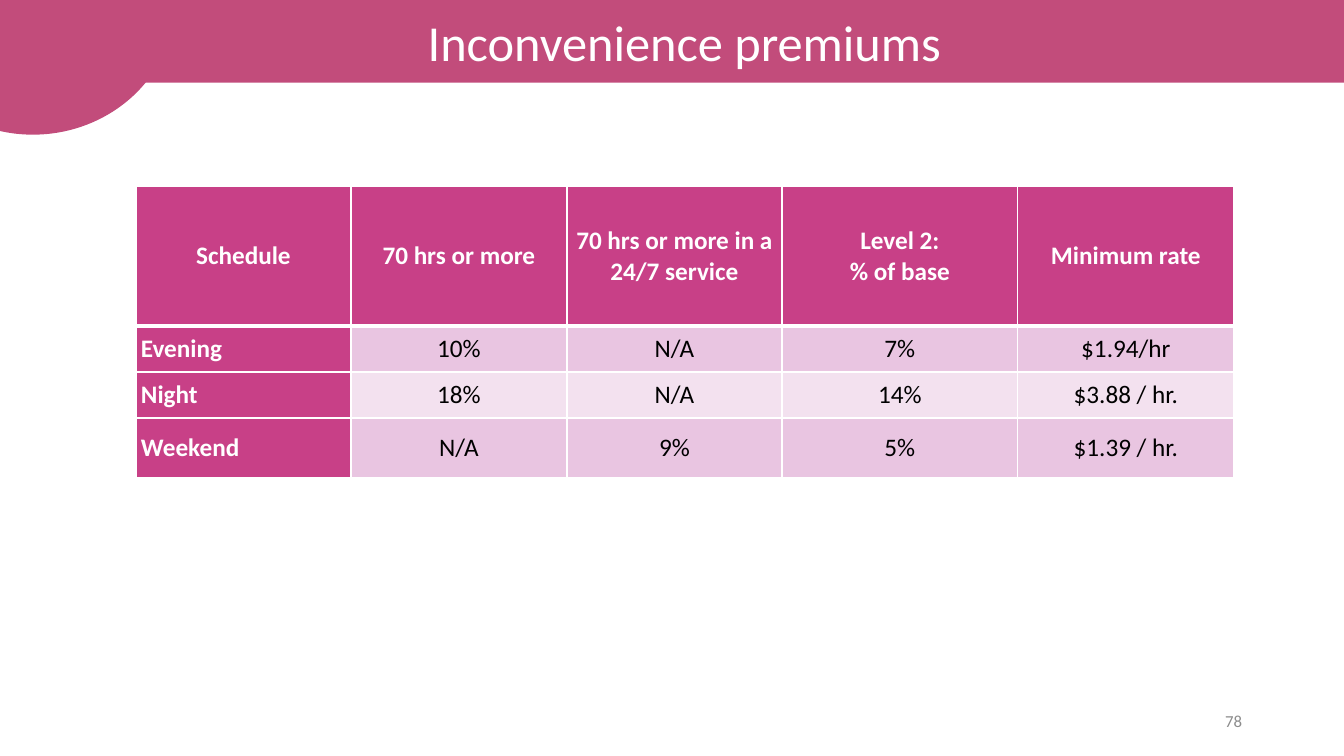
from pptx import Presentation
from pptx.dml.color import RGBColor
from pptx.enum.shapes import MSO_SHAPE
from pptx.enum.text import MSO_ANCHOR, PP_ALIGN
from pptx.oxml import parse_xml
from pptx.oxml.ns import nsdecls
from pptx.util import Pt

# Content
TITLE = "Inconvenience premiums"
PAGE_NUMBER = "78"
PREMIUMS = [
    ("Schedule", "70 hrs or more", "70 hrs or more in a 24/7 service",
     "Level 2:\v% of base", "Minimum rate"),
    ("Evening", "10%", "N/A", "7%", "$1.94/hr"),
    ("Night", "18%", "N/A", "14%", "$3.88 / hr."),
    ("Weekend", "N/A", "9%", "5%", "$1.39 / hr."),
]

# Look, lengths in px
FONT = "Calibri"
WHITE, BLACK, GREY = "FFFFFF", "000000", "8C8C8C"
BANNER_PINK, HEADING_PINK = "C24C7B", "C84087"
BANDS = ("F3E1EF", "E9C5E1")
COLUMN_WIDTHS = (215, 216, 215, 236, 216)
ROW_HEIGHTS = (140, 46, 46, 60)
TABLE_LEFT, TABLE_TOP = 136, 186


def px(length):
    return round(length * 914400 / 100.8)


def box(left, top, width, height):
    return px(left), px(top), px(width), px(height)


def rgb(value):
    return RGBColor.from_string(value)


def write(frame, text, size, color, align, bold=False):
    frame.text = text
    frame.word_wrap = True
    paragraph = frame.paragraphs[0]
    paragraph.alignment = align
    for run in paragraph.runs:
        run.font.name = FONT
        run.font.size = Pt(size)
        run.font.bold = bold
        run.font.color.rgb = rgb(color)


def add_pink_shape(slide, preset, place):
    shape = slide.shapes.add_shape(preset, *box(*place))
    shape.shadow.inherit = False
    shape.fill.solid()
    shape.fill.fore_color.rgb = rgb(BANNER_PINK)
    shape.line.color.rgb = rgb(BANNER_PINK)
    shape.line.width = Pt(1)
    return shape


def set_borders(cell, widths):
    properties = cell._tc.get_or_add_tcPr()
    for position, (side, width) in enumerate(widths.items()):
        properties.insert(position, parse_xml(
            f'<a:{side} {nsdecls("a")} w="{Pt(width)}"><a:solidFill>'
            f'<a:srgbClr val="{WHITE}"/></a:solidFill></a:{side}>'))


def add_premiums(slide):
    premiums = slide.shapes.add_table(
        len(ROW_HEIGHTS), len(COLUMN_WIDTHS),
        *box(TABLE_LEFT, TABLE_TOP, sum(COLUMN_WIDTHS), sum(ROW_HEIGHTS))).table
    for column, width in zip(premiums.columns, COLUMN_WIDTHS):
        column.width = px(width)
    for row, height in zip(premiums.rows, ROW_HEIGHTS):
        row.height = px(height)
    for r, values in enumerate(PREMIUMS):
        for c, value in enumerate(values):
            cell = premiums.cell(r, c)
            heading = r == 0 or c == 0
            cell.margin_left = cell.margin_right = px(5)
            cell.margin_top = cell.margin_bottom = 0
            cell.vertical_anchor = MSO_ANCHOR.MIDDLE
            cell.fill.solid()
            cell.fill.fore_color.rgb = rgb(HEADING_PINK if heading else BANDS[r % 2])
            write(cell.text_frame, value, 18, WHITE if heading else BLACK,
                  PP_ALIGN.LEFT if r and c == 0 else PP_ALIGN.CENTER, heading)
            # The rule under the header row is heavier
            set_borders(cell, {"lnL": 1, "lnR": 1, "lnT": 3 if r == 1 else 1,
                               "lnB": 3 if r == 0 else 1})


def main():
    deck = Presentation()
    deck.slide_width, deck.slide_height = px(1344), px(756)
    slide = deck.slides.add_slide(deck.slide_layouts[6])

    # Title banner and corner disc
    banner = add_pink_shape(slide, MSO_SHAPE.ROUNDED_RECTANGLE, (0, 0, 1369, 82))
    banner.text_frame.vertical_anchor = MSO_ANCHOR.MIDDLE
    write(banner.text_frame, TITLE, 36, WHITE, PP_ALIGN.CENTER)
    add_pink_shape(slide, MSO_SHAPE.OVAL, (-109, -134, 284, 268))

    # Premium rates
    add_premiums(slide)

    # Page number
    page = slide.shapes.add_textbox(*box(950, 701, 302, 40)).text_frame
    page.vertical_anchor = MSO_ANCHOR.MIDDLE
    write(page, PAGE_NUMBER, 12, GREY, PP_ALIGN.RIGHT)

    deck.save("out.pptx")


if __name__ == "__main__":
    main()
